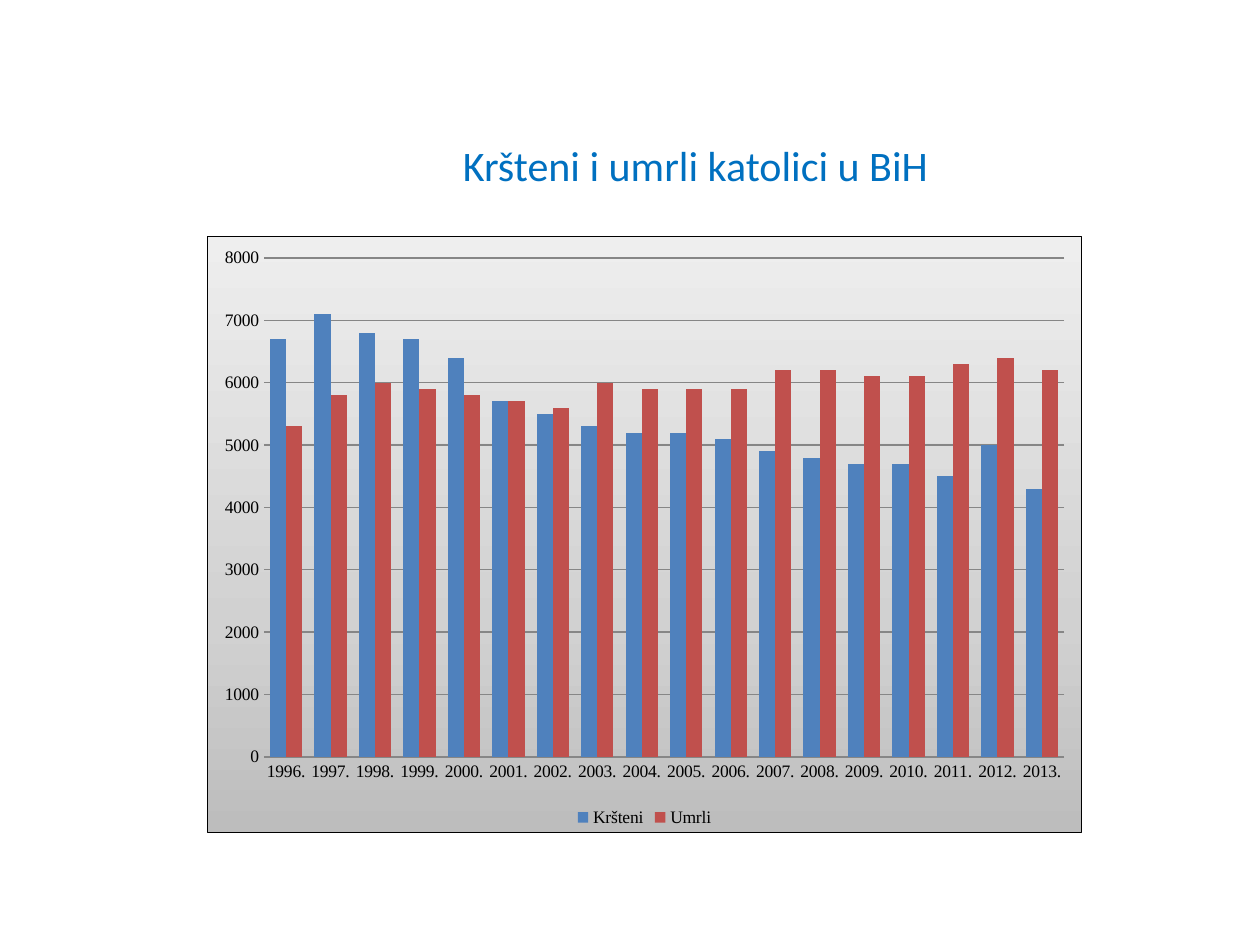
from lxml.etree import fromstring
from pptx import Presentation
from pptx.chart.data import CategoryChartData
from pptx.dml.color import RGBColor
from pptx.enum.chart import XL_CHART_TYPE, XL_LEGEND_POSITION, XL_TICK_MARK
from pptx.enum.text import MSO_ANCHOR, PP_ALIGN
from pptx.util import Inches, Pt

HUES = {"title": "0070C0", "births": "4F81BD", "deaths": "C0504D",
        "text": "000000", "grid": "868686",
        "low": "BDBDBD", "mid": "D1D1D1", "high": "EEEEEE"}
BORN = [6700, 7100, 6800, 6700, 6400, 5700, 5500, 5300, 5200,
        5200, 5100, 4900, 4800, 4700, 4700, 4500, 5000, 4300]
DIED = [5300, 5800, 6000, 5900, 5800, 5700, 5600, 6000, 5900,
        5900, 5900, 6200, 6200, 6100, 6100, 6300, 6400, 6200]


def color(name):
    return RGBColor.from_string(HUES[name])


deck = Presentation()
deck.slide_width, deck.slide_height = Inches(10), Inches(7.5)
slide = deck.slides.add_slide(deck.slide_layouts[5])

# Title
title = slide.shapes.title
title.left, title.top = Inches(1.26), Inches(0.68)
title.width, title.height = Inches(8.52), Inches(1.25)
frame = title.text_frame
frame.text = "Kršteni i umrli katolici u BiH"
frame.vertical_anchor = MSO_ANCHOR.MIDDLE
line = frame.paragraphs[0]
line.alignment = PP_ALIGN.CENTER
font = line.runs[0].font
font.name, font.size = "Calibri", Pt(24)
font.color.rgb = color("title")

# Chart data
data = CategoryChartData()
data.categories = [f"{year}." for year in range(1996, 2014)]
data.add_series("Kršteni", BORN)
data.add_series("Umrli", DIED)
chart = slide.shapes.add_chart(
    XL_CHART_TYPE.COLUMN_CLUSTERED, Inches(1.64), Inches(1.87),
    Inches(6.95), Inches(4.74), data).chart
chart.has_title = False
chart.font.name, chart.font.size = "Times New Roman", Pt(10)
chart.font.color.rgb = color("text")

# Columns
plot = chart.plots[0]
plot.gap_width, plot.overlap = 75, 0
plot.vary_by_categories = False
for series, name in zip(plot.series, ("births", "deaths")):
    series.format.fill.solid()
    series.format.fill.fore_color.rgb = color(name)

# Axes and legend
years, count = chart.category_axis, chart.value_axis
for axis in (years, count):
    axis.major_tick_mark = axis.minor_tick_mark = XL_TICK_MARK.NONE
years.format.line.color.rgb = color("grid")
count.minimum_scale, count.maximum_scale, count.major_unit = 0, 8000, 1000
count.format.line.fill.background()
count.has_major_gridlines = True
count.major_gridlines.format.line.color.rgb = color("grid")
chart.has_legend = True
chart.legend.position = XL_LEGEND_POSITION.BOTTOM
chart.legend.include_in_layout = False

# Chart area: gradient running upwards and a thin border
stops = "".join(
    f'<a:gs pos="{pos * 1000}"><a:srgbClr val="{HUES[name]}"/></a:gs>'
    for pos, name in ((0, "low"), (35, "mid"), (100, "high")))
area = fromstring(
    '<c:spPr xmlns:c="http://schemas.openxmlformats.org/drawingml/2006/chart" '
    'xmlns:a="http://schemas.openxmlformats.org/drawingml/2006/main">'
    f'<a:gradFill><a:gsLst>{stops}</a:gsLst>'
    '<a:lin ang="16200000" scaled="1"/></a:gradFill>'
    f'<a:ln w="{Pt(0.75)}"><a:solidFill><a:srgbClr val="{HUES["text"]}"/>'
    '</a:solidFill></a:ln></c:spPr>')
chart.element.chart.addnext(area) if hasattr(chart, "element") else \
    chart._chartSpace.chart.addnext(area)

deck.save("out.pptx")
